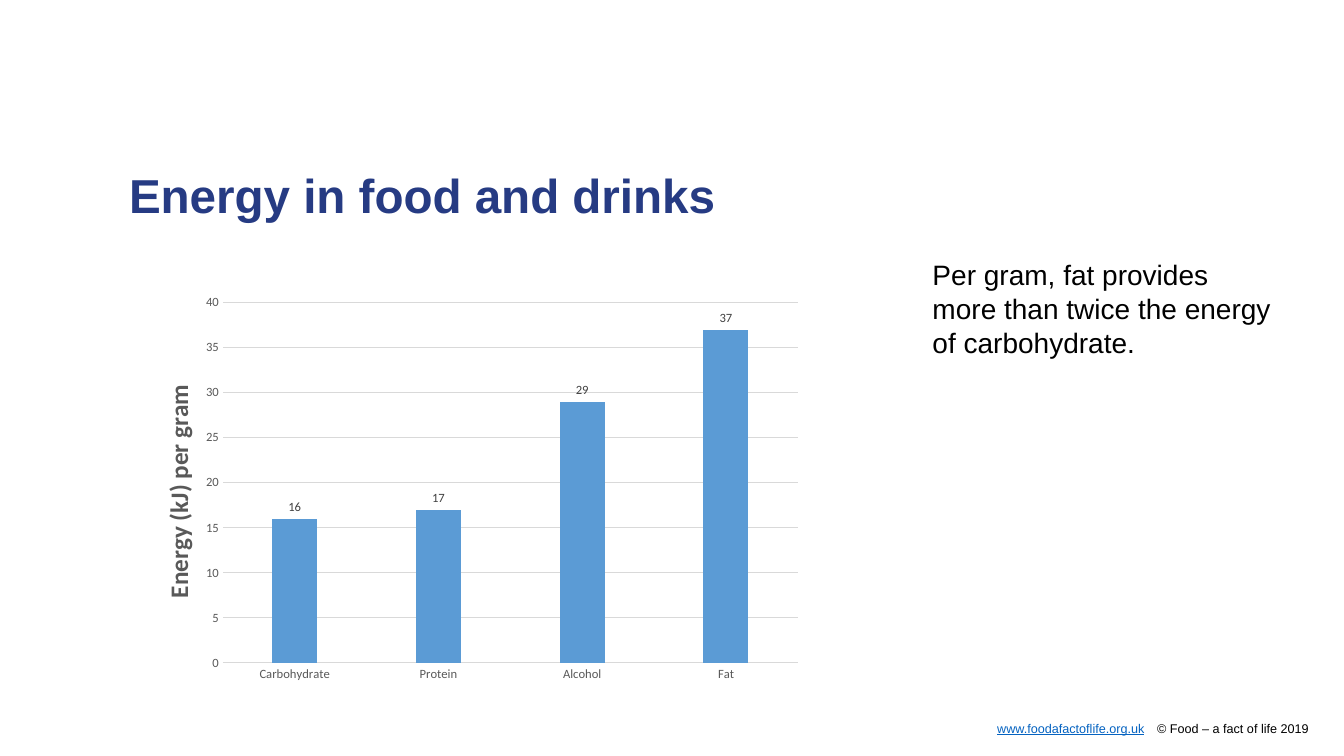
import pptx
import pptx.chart.data
import pptx.dml.color
import pptx.enum.chart
import pptx.enum.text
import pptx.oxml
import pptx.oxml.ns
import pptx.util

Inches = pptx.util.Inches
Pt = pptx.util.Pt

COLORS = {
    "title": "263B83",
    "text": "000000",
    "link": "0563C1",
    "bar": "5B9BD5",
    "grid": "D9D9D9",
    "axis": "595959",
    "value": "404040",
}


def rgb(name):
    return pptx.dml.color.RGBColor.from_string(COLORS[name])


def style_font(font, name, size, color, bold=False):
    font.name = name
    font.size = Pt(size)
    font.bold = bold
    font.color.rgb = rgb(color)


def add_paragraph_box(slide, left, top, width, height, margins=True):
    frame = slide.shapes.add_textbox(
        Inches(left), Inches(top), Inches(width), Inches(height)).text_frame
    frame.word_wrap = True
    frame.vertical_anchor = pptx.enum.text.MSO_ANCHOR.TOP
    if not margins:
        frame.margin_left = frame.margin_right = 0
        frame.margin_top = frame.margin_bottom = 0
    return frame.paragraphs[0]


def add_run(paragraph, text, size, color, bold=False, underline=False):
    run = paragraph.add_run()
    run.text = text
    style_font(run.font, "Arial", size, color, bold)
    run.font.underline = underline


def add_right_tabs(paragraph, *stops):
    tabs = pptx.oxml.parse_xml(
        f"<a:tabLst {pptx.oxml.ns.nsdecls('a')}>"
        + "".join(f'<a:tab pos="{Inches(stop)}" algn="r"/>' for stop in stops)
        + "</a:tabLst>")
    paragraph._p.get_or_add_pPr().append(tabs)


def place_in_chart(element, inner=False, **fractions):
    """Give a plot area or an axis title a place as fractions of the chart."""
    for old in element.findall(pptx.oxml.ns.qn("c:layout")):
        element.remove(old)
    target = '<c:layoutTarget val="inner"/>' if inner else ""
    modes = "".join(f'<c:{key}Mode val="edge"/>' for key in "xy")
    values = "".join(f'<c:{key} val="{val}"/>' for key, val in fractions.items())
    layout = pptx.oxml.parse_xml(
        f"<c:layout {pptx.oxml.ns.nsdecls('c')}><c:manualLayout>"
        f"{target}{modes}{values}</c:manualLayout></c:layout>")
    text = element.find(pptx.oxml.ns.qn("c:tx"))
    if text is None:
        element.insert(0, layout)
    else:
        text.addnext(layout)


def style_axis(axis):
    axis.major_tick_mark = pptx.enum.chart.XL_TICK_MARK.NONE
    axis.minor_tick_mark = pptx.enum.chart.XL_TICK_MARK.NONE
    style_font(axis.tick_labels.font, "Calibri", 9, "axis")


def style_line(line):
    line.color.rgb = rgb("grid")
    line.width = Pt(0.75)


def add_energy_chart(slide):
    energy = pptx.chart.data.CategoryChartData()
    energy.categories = ["Carbohydrate", "Protein", "Alcohol", "Fat"]
    energy.add_series("Series 1", [16, 17, 29, 37])
    chart = slide.shapes.add_chart(
        pptx.enum.chart.XL_CHART_TYPE.COLUMN_CLUSTERED,
        Inches(1.28), Inches(2.85), Inches(6.79), Inches(4), energy).chart
    chart.has_title = False
    chart.has_legend = False
    style_font(chart.font, "Calibri", 10, "text")

    # Axes
    foods, energy_axis = chart.category_axis, chart.value_axis
    style_axis(foods)
    style_axis(energy_axis)
    style_line(foods.format.line)
    energy_axis.format.line.fill.background()
    energy_axis.minimum_scale = 0
    energy_axis.maximum_scale = 40
    energy_axis.major_unit = 5
    style_line(energy_axis.major_gridlines.format.line)

    # Vertical axis title
    title = energy_axis.axis_title
    title_run = title.text_frame.paragraphs[0].add_run()
    title_run.text = "Energy (kJ) per gram"
    style_font(title_run.font, "Calibri", 18, "axis", bold=True)
    title.text_frame._txBody.bodyPr.set("rot", "-5400000")
    title.text_frame._txBody.bodyPr.set("vert", "horz")
    place_in_chart(title._element, x=0.04, y=0.23)

    # Columns and their values
    plot = chart.plots[0]
    plot.gap_width = 219
    plot.overlap = -27
    plot.vary_by_categories = False
    columns = plot.series[0]
    columns.format.fill.solid()
    columns.format.fill.fore_color.rgb = rgb("bar")
    labels = columns.data_labels
    labels.show_value = True
    labels.position = pptx.enum.chart.XL_LABEL_POSITION.OUTSIDE_END
    style_font(labels.font, "Calibri", 9, "value")
    plot_area = chart._chartSpace.chart.plotArea
    place_in_chart(plot_area, inner=True, x=0.137, y=0.038, w=0.84, h=0.894)


def main():
    deck = pptx.Presentation()
    deck.slide_width = Inches(13.33)
    deck.slide_height = Inches(7.5)
    slide = deck.slides.add_slide(deck.slide_layouts[6])

    # Footer
    footer = add_paragraph_box(slide, 1.26, 7.15, 11.73, 0.15, margins=False)
    add_right_tabs(footer, 10.09, 11.72)
    add_run(footer, "\t", 9, "text")
    add_run(footer, "www.foodafactoflife.org.uk", 9, "link", underline=True)
    add_run(footer, "\t", 9, "text")
    add_run(footer, "© Food – a fact of life 2019", 9, "text")

    # Heading
    heading = add_paragraph_box(slide, 1.28, 1.71, 10.63, 0.79, margins=False)
    heading.line_spacing = 0.9
    add_run(heading, "Energy in food and drinks", 34, "title", bold=True)

    # Message beside the chart
    message = add_paragraph_box(slide, 9.15, 2.51, 3.58, 1.11)
    add_run(message, "Per gram, fat provides more than twice the energy "
            "of carbohydrate.", 20, "text")

    add_energy_chart(slide)
    deck.save("out.pptx")


if __name__ == "__main__":
    main()
